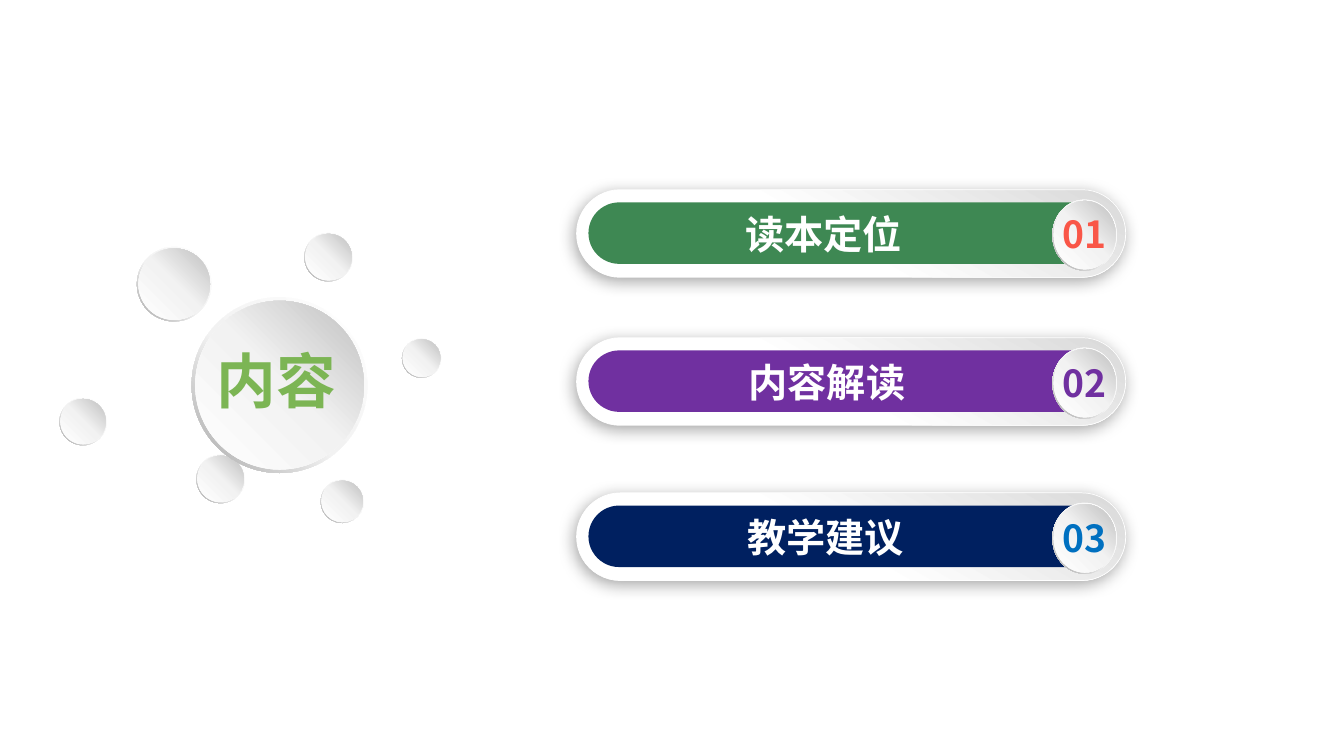
import pptx
import pptx.dml.color
import pptx.enum.shapes
import pptx.enum.text
import pptx.oxml
import pptx.oxml.ns
import pptx.util

Cm = pptx.util.Cm
SHAPE = pptx.enum.shapes.MSO_SHAPE
ALIGN = pptx.enum.text.PP_ALIGN
FONT = "Noto Sans CJK SC"

HEADING = "内容"
BUBBLES = [
    (10.13, 8.53, 0.99),
    (4.95, 11.46, 1.22),
    (8.08, 12.09, 1.09),
    (3.45, 6.22, 1.88),
    (7.67, 5.87, 1.22),
    (1.5, 10.03, 1.19),
]
MAIN_BUBBLE = (4.83, 7.49, 4.43)
TOPICS = [
    ("01", "读本定位", 4.78, 18.54, "3E8853", "F95647"),
    ("02", "内容解读", 8.51, 18.62, "7030A0", "7030A0"),
    ("03", "教学建议", 12.42, 18.59, "002060", "0070C0"),
]
RIM = ([(0, "FFFFFF"), (55, "F2F2F2"), (100, "A6A6A6")], 135)
DISC = ([(0, "FFFFFF"), (51, "F2F2F2"), (100, "BFBFBF")], 315)
TRACK = ([(45, "FFFFFF"), (100, "D9D9D9")], 300)


def color(value):
    return pptx.dml.color.RGBColor.from_string(value)


def add_shape(group, kind, left, top, width, height, paint, adjustment=None):
    shape = group.shapes.add_shape(kind, Cm(left), Cm(top), Cm(width), Cm(height))
    shape.shadow.inherit = False
    shape.line.fill.background()
    if adjustment is not None:
        shape.adjustments[0] = adjustment
    if isinstance(paint, str):
        shape.fill.solid()
        shape.fill.fore_color.rgb = color(paint)
    else:
        paint_gradient(shape, *paint)
    return shape


def paint_gradient(shape, stops, angle):
    shape.fill.gradient()
    shape.fill.gradient_angle = 360 - angle
    stop_list = shape.element.spPr.find(".//" + pptx.oxml.ns.qn("a:gsLst"))
    for stop in list(stop_list):
        stop_list.remove(stop)
    for position, value in stops:
        stop_list.append(pptx.oxml.parse_xml(
            f'<a:gs {pptx.oxml.ns.nsdecls("a")} pos="{position * 1000}">'
            f'<a:srgbClr val="{value}"/></a:gs>'))


def add_soft_shadow(shape):
    effects = shape.element.spPr.find(pptx.oxml.ns.qn("a:effectLst"))
    effects.append(pptx.oxml.parse_xml(
        f'<a:outerShdw {pptx.oxml.ns.nsdecls("a")} blurRad="152400" dist="38100" '
        'dir="8100000" algn="tr" rotWithShape="0"><a:srgbClr val="000000">'
        '<a:alpha val="34000"/></a:srgbClr></a:outerShdw>'))


def add_button(group, left, top, width, height):
    inset = 0.02 * width
    add_shape(group, SHAPE.DONUT, left, top, width, height, RIM, 0.049)
    add_shape(group, SHAPE.OVAL, left + inset, top + inset,
              width - 2 * inset, height - 2 * inset, DISC)


def add_text(group, text, left, top, width, height, size, value, align, margin=0):
    box = group.shapes.add_textbox(Cm(left), Cm(top), Cm(width), Cm(height))
    frame = box.text_frame
    frame.text = text
    frame.word_wrap = True
    frame.vertical_anchor = pptx.enum.text.MSO_ANCHOR.MIDDLE
    frame.margin_left = frame.margin_right = Cm(margin)
    frame.margin_top = frame.margin_bottom = Cm(margin / 2)
    para = frame.paragraphs[0]
    para.alignment = align
    span = para.runs[0]
    span.font.size = pptx.util.Pt(size)
    span.font.bold = True
    span.font.color.rgb = color(value)
    span.font.name = FONT
    span.font._element.append(pptx.oxml.parse_xml(
        f'<a:ea {pptx.oxml.ns.nsdecls("a")} typeface="{FONT}"/>'))


def add_topic(group, number, title, top, title_left, bar_color, number_color):
    track = add_shape(group, SHAPE.ROUNDED_RECTANGLE, 14.53, top, 13.84, 2.21, TRACK, 0.5)
    track.line.color.rgb = color("FFFFFF")
    track.line.width = pptx.util.Pt(0.5)
    add_soft_shadow(track)
    add_shape(group, SHAPE.ROUNDED_RECTANGLE, 14.83, top + 0.32, 13.18, 1.55, bar_color, 0.5)
    add_text(group, title, title_left, top + 0.38, 4.72, 1.45, 28, "FFFFFF", ALIGN.LEFT, 0.25)
    add_button(group, 26.52, top + 0.25, 1.63, 1.79)
    add_text(group, number, 26.67, top + 0.55, 1.32, 1.14, 26.6, number_color, ALIGN.CENTER)


def main():
    """Build the contents slide with its bubbles and three topic bars."""
    deck = pptx.Presentation()
    deck.slide_width, deck.slide_height = Cm(33.87), Cm(19.05)
    page = deck.slides.add_slide(deck.slide_layouts[6])
    for left, top, size in BUBBLES + [MAIN_BUBBLE]:
        group = page.shapes.add_group_shape()
        add_button(group, left, top, size, size)
    add_text(group, HEADING, 5.42, 8.64, 3.1, 1.83, 42.6, "7CB554", ALIGN.CENTER)
    for topic in TOPICS:
        add_topic(page.shapes.add_group_shape(), *topic)
    deck.save("out.pptx")


if __name__ == "__main__":
    main()
